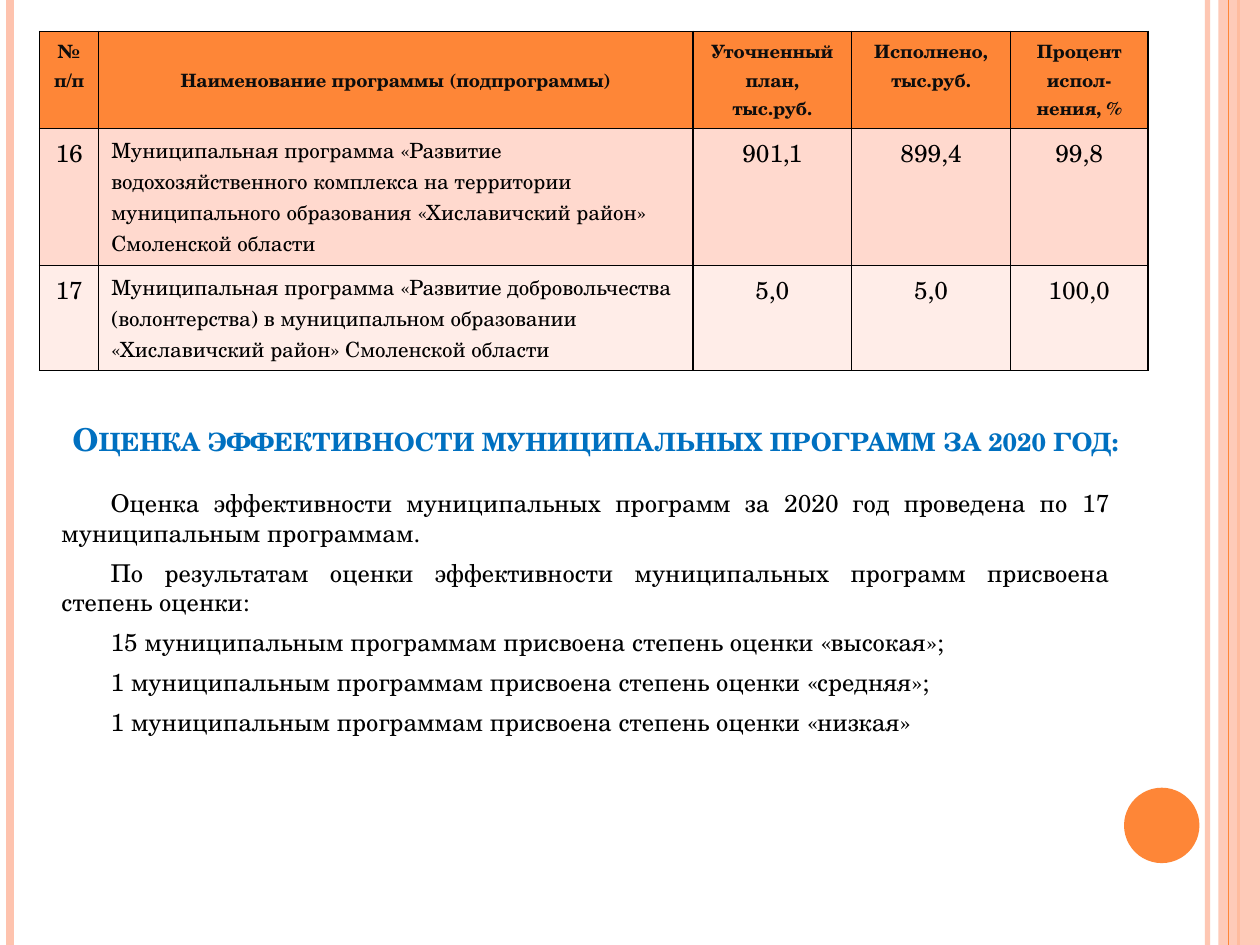
from dataclasses import dataclass

import lxml.etree
import pptx
import pptx.dml.color
import pptx.enum.shapes
import pptx.enum.text
import pptx.oxml.ns
import pptx.util

Cm = pptx.util.Cm
Pt = pptx.util.Pt
Align = pptx.enum.text.PP_ALIGN
Anchor = pptx.enum.text.MSO_ANCHOR
Preset = pptx.enum.shapes.MSO_SHAPE
qn = pptx.oxml.ns.qn

FONT = "TeX Gyre Schola"
ORANGE, PEACH, BLACK = "FE8637", "FEC3AE", "000000"
WIDTH, HEIGHT = 25.4, 19.05


@dataclass
class Stripe:
    x: float
    color: str
    weight: float
    opacity: int = 100


@dataclass
class Decoration:
    preset: int
    x: float
    y: float
    width: float
    height: float
    color: str
    opacity: int = 100


@dataclass
class RowStyle:
    height: float
    fill: str
    color: str
    size: float
    name_size: float
    bold: bool = False


STRIPES = [
    Stripe(24.34, PEACH, 3, 93),
    Stripe(0.21, PEACH, 4.5),
    Stripe(24.97, ORANGE, 1.5),
    Stripe(24.77, ORANGE, 0.75),
]
BAND = Decoration(Preset.RECTANGLE, 24.56, 0, 0.84, HEIGHT, PEACH, 87)
CIRCLE = Decoration(Preset.OVAL, 22.66, 15.88, 1.52, 1.52, ORANGE)

COLUMN_WIDTHS = [1.19, 11.98, 3.2, 3.2, 2.77]
NAME_COLUMN = 1
ROW_STYLES = [
    RowStyle(1.96, ORANGE, "0D0D0D", 10.5, 10.5, True),
    RowStyle(2.76, "FFD9CE", BLACK, 14, 12),
    RowStyle(2.11, "FFEDE8", BLACK, 14, 12),
]
PROGRAMS = [
    ("№\nп/п", "Наименование программы (подпрограммы)", "Уточненный план, тыс.руб.",
     "Исполнено, тыс.руб.", "Процент испол-нения, %"),
    ("16", "Муниципальная программа «Развитие водохозяйственного комплекса на территории "
     "муниципального образования «Хиславичский район» Смоленской области",
     "901,1", "899,4", "99,8"),
    ("17", "Муниципальная программа «Развитие добровольчества (волонтерства) в муниципальном "
     "образовании «Хиславичский район» Смоленской области", "5,0", "5,0", "100,0"),
]
HEADING = "Оценка эффективности муниципальных программ за 2020 год:"
ASSESSMENT = [
    "Оценка эффективности муниципальных программ за 2020 год проведена по 17 муниципальным программам.",
    "По результатам оценки эффективности муниципальных программ присвоена степень оценки:",
    "15 муниципальным программам присвоена степень оценки «высокая»;",
    "1 муниципальным программам присвоена степень оценки «средняя»;",
    "1 муниципальным программам присвоена степень оценки «низкая»",
]


def paint(fill, color: str, opacity: int = 100) -> None:
    fill.solid()
    fill.fore_color.rgb = pptx.dml.color.RGBColor.from_string(color)
    if opacity < 100:
        tint = fill._xPr.find(qn("a:solidFill"))[0]
        lxml.etree.SubElement(tint, qn("a:alpha")).set("val", str(opacity * 1000))


def set_font(font, size: float, color: str, bold: bool = False) -> None:
    font.name, font.size, font.bold = FONT, Pt(size), bold
    paint(font.fill, color)


def draw_stripe(slide, stripe: Stripe) -> None:
    line = slide.shapes.add_connector(
        pptx.enum.shapes.MSO_CONNECTOR.STRAIGHT,
        Cm(stripe.x), Cm(0), Cm(stripe.x), Cm(HEIGHT))
    line.line.width = Pt(stripe.weight)
    paint(line.line.fill, stripe.color, stripe.opacity)
    lxml.etree.SubElement(line._element.spPr, qn("a:effectLst"))


def draw_decoration(slide, item: Decoration) -> None:
    shape = slide.shapes.add_shape(
        item.preset, Cm(item.x), Cm(item.y), Cm(item.width), Cm(item.height))
    shape.shadow.inherit = False
    shape.line.fill.background()
    paint(shape.fill, item.color, item.opacity)


def add_borders(cell) -> None:
    properties = cell._tc.get_or_add_tcPr()
    for index, side in enumerate(("a:lnL", "a:lnR", "a:lnT", "a:lnB")):
        border = lxml.etree.Element(qn(side), w=str(Pt(1)))
        fill = lxml.etree.SubElement(border, qn("a:solidFill"))
        lxml.etree.SubElement(fill, qn("a:srgbClr")).set("val", BLACK)
        properties.insert(index, border)


def fill_cell(cell, text: str, style: RowStyle, is_name: bool) -> None:
    cell.text = text
    paint(cell.fill, style.fill)
    add_borders(cell)
    if is_name and style.bold:
        cell.vertical_anchor = Anchor.MIDDLE
    for paragraph in cell.text_frame.paragraphs:
        paragraph.alignment = Align.LEFT if is_name and not style.bold else Align.CENTER
        set_font(paragraph.font, style.name_size if is_name else style.size,
                 style.color, style.bold)


def draw_programs(slide) -> None:
    table = slide.shapes.add_table(
        len(PROGRAMS), len(COLUMN_WIDTHS), Cm(0.8), Cm(0.63),
        Cm(sum(COLUMN_WIDTHS)), Cm(sum(style.height for style in ROW_STYLES))).table
    for column, width in zip(table.columns, COLUMN_WIDTHS):
        column.width = Cm(width)
    for row, style, texts in zip(table.rows, ROW_STYLES, PROGRAMS):
        row.height = Cm(style.height)
        for index, (cell, text) in enumerate(zip(row.cells, texts)):
            fill_cell(cell, text, style, index == NAME_COLUMN)


def add_text(slide, x: float, y: float, width: float, height: float, text: str):
    frame = slide.shapes.add_textbox(Cm(x), Cm(y), Cm(width), Cm(height)).text_frame
    frame.word_wrap = True
    frame.text = text
    return frame


def draw_heading(slide) -> None:
    frame = add_text(slide, 0.6, 6.97, 22.81, 2.39, HEADING)
    frame.vertical_anchor = Anchor.BOTTOM
    paragraph = frame.paragraphs[0]
    paragraph.alignment = Align.CENTER
    set_font(paragraph.font, 18, "0070C0", True)
    paragraph.runs[0].font._element.set("cap", "small")


def draw_assessment(slide) -> None:
    frame = add_text(slide, 0.99, 9.72, 21.63, 8.26, "\n".join(ASSESSMENT))
    for paragraph in frame.paragraphs:
        paragraph.alignment = Align.JUSTIFY
        paragraph.space_before = Pt(6)
        paragraph._p.get_or_add_pPr().set("indent", str(Cm(0.99)))
        set_font(paragraph.font, 14, BLACK)


def main() -> None:
    deck = pptx.Presentation()
    deck.slide_width, deck.slide_height = Cm(WIDTH), Cm(HEIGHT)
    slide = deck.slides.add_slide(deck.slide_layouts[6])

    # Side stripes, band and circle
    for stripe in STRIPES[:3]:
        draw_stripe(slide, stripe)
    draw_decoration(slide, BAND)
    draw_stripe(slide, STRIPES[3])
    draw_decoration(slide, CIRCLE)

    # Programme results and their assessment
    draw_programs(slide)
    draw_assessment(slide)
    draw_heading(slide)

    deck.save("out.pptx")


if __name__ == "__main__":
    main()
